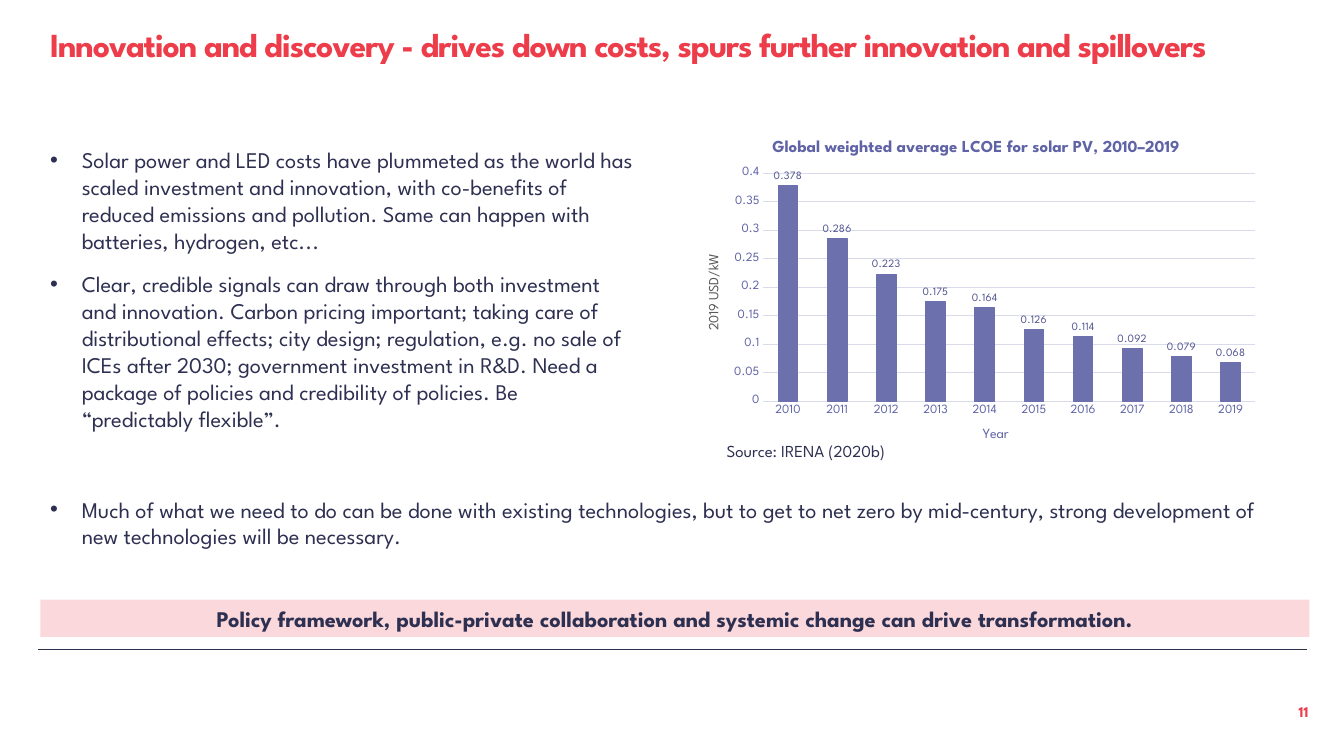
from lxml import etree
from pptx import Presentation
from pptx.chart.data import CategoryChartData
from pptx.dml.color import RGBColor
from pptx.enum.chart import XL_CHART_TYPE as ChartType, XL_LABEL_POSITION as LabelPosition
from pptx.enum.chart import XL_TICK_MARK as TickMark
from pptx.enum.shapes import MSO_CONNECTOR as Connector, MSO_SHAPE as Shape
from pptx.enum.text import MSO_ANCHOR as Anchor, PP_ALIGN as Align
from pptx.oxml.ns import qn
from pptx.util import Pt

FONT = "League Spartan"
COLORS = {
    "navy": "2E3052", "red": "ED3D4A", "pink": "FBD8DB", "bar": "6C70AD",
    "axis": "6064A6", "label": "50548F", "grid": "DADBEA", "gray": "595959",
}
LEFT = 28.8
LCOE = {
    "2010": 0.378, "2011": 0.286, "2012": 0.223, "2013": 0.175, "2014": 0.164,
    "2015": 0.126, "2016": 0.114, "2017": 0.092, "2018": 0.079, "2019": 0.068,
}
COST_POINTS = [
    "Solar power and LED costs have plummeted as the world has scaled investment and "
    "innovation, with co-benefits of reduced emissions and pollution. Same can happen with "
    "batteries, hydrogen, etc...",
    "Clear, credible signals can draw through both investment and innovation. Carbon pricing "
    "important; taking care of distributional effects; city design; regulation, e.g. no sale of "
    "ICEs after 2030; government investment in R&D. Need a package of policies and credibility "
    "of policies. Be “predictably flexible”.",
]
TECHNOLOGY_POINTS = [
    "Much of what we need to do can be done with existing technologies, but to get to net zero "
    "by mid-century, strong development of new technologies will be necessary.",
]


def color(name):
    return RGBColor.from_string(COLORS[name])


def style(font, size, name, bold=False):
    font.name = FONT
    font.size = Pt(size)
    font.bold = bold
    font.color.rgb = color(name)


def add_text(page, box, text, size, name, bold=False):
    frame = page.shapes.add_textbox(*map(Pt, box)).text_frame
    frame.word_wrap = True
    frame.text = text
    style(frame.paragraphs[0].runs[0].font, size, name, bold)
    return frame


def add_title(page, box, text):
    frame = add_text(page, box, text, 24, "red", True)
    frame.paragraphs[0].runs[0].font._element.set("spc", "-80")


def add_bullets(page, box, points):
    frame = page.shapes.add_textbox(*map(Pt, box)).text_frame
    frame.word_wrap = True
    frame.text = "\n".join(points)
    for para in frame.paragraphs:
        para.space_after = Pt(12)
        properties = para._p.get_or_add_pPr()
        properties.set("marL", str(Pt(22.5)))
        properties.set("indent", str(Pt(-22.5)))
        etree.SubElement(properties, qn("a:buFont")).set("typeface", "Arial")
        etree.SubElement(properties, qn("a:buChar")).set("char", "•")
        style(para.runs[0].font, 16, "navy")


def set_layout(parent, index, **places):
    for old in parent.findall(qn("c:layout")):
        parent.remove(old)
    layout = etree.Element(qn("c:layout"))
    manual = etree.SubElement(layout, qn("c:manualLayout"))
    if "w" in places:
        etree.SubElement(manual, qn("c:layoutTarget")).set("val", "inner")
    for mode in ("xMode", "yMode"):
        etree.SubElement(manual, qn(f"c:{mode}")).set("val", "edge")
    for key, value in places.items():
        etree.SubElement(manual, qn(f"c:{key}")).set("val", str(value))
    parent.insert(index, layout)


def set_heading(heading, text, size, name, x, y, bold=False):
    heading.text_frame.text = text
    style(heading.text_frame.paragraphs[0].runs[0].font, size, name, bold)
    set_layout(heading._element, 1, x=x, y=y)


def add_cost_chart(page, box):
    left, top, width, height = box
    data = CategoryChartData()
    data.categories = list(LCOE)
    data.add_series("Series 1", list(LCOE.values()))
    chart = page.shapes.add_chart(ChartType.COLUMN_CLUSTERED, *map(Pt, box), data).chart
    style(chart.font, 10, "navy")
    chart.has_legend = False
    chart.has_title = True
    set_heading(chart.chart_title, "Global weighted average LCOE for solar PV, 2010–2019",
                12, "axis", 0.15, 0.04, True)
    years, costs = chart.category_axis, chart.value_axis
    for axis in (years, costs):
        axis.has_title = True
        axis.major_tick_mark = axis.minor_tick_mark = TickMark.NONE
        style(axis.tick_labels.font, 9, "axis")
    set_heading(years.axis_title, "Year", 10, "axis", 0.51, 0.89)
    set_heading(costs.axis_title, "2019 USD/kW", 10, "gray", 0.04, 0.38)
    costs.minimum_scale, costs.maximum_scale, costs.major_unit = 0, 0.4, 0.05
    costs.format.line.fill.background()
    for line in (years.format.line, costs.major_gridlines.format.line):
        line.color.rgb = color("grid")
        line.width = Pt(0.75)

    plot = chart.plots[0]
    plot.gap_width = 150
    plot.vary_by_categories = False
    plot.has_data_labels = True
    labels = plot.data_labels
    labels.show_value = True
    labels.position = LabelPosition.OUTSIDE_END
    style(labels.font, 8, "label")
    bars = plot.series[0].format
    bars.fill.solid()
    bars.fill.fore_color.rgb = color("bar")
    bars.line.color.rgb = color("bar")
    bars.line.width = Pt(0.75)
    set_layout(chart._chartSpace.chart.plotArea, 0, x=0.14, y=0.15, w=0.84, h=0.67)
    add_text(page, (left + 25.2, top + height - 19.4, 151.2, 21.6),
             "Source: IRENA (2020b)", 12, "navy")


def add_banner(page, box, text):
    banner = page.shapes.add_shape(Shape.RECTANGLE, *map(Pt, box))
    banner.shadow.inherit = False
    banner.fill.solid()
    banner.fill.fore_color.rgb = color("pink")
    banner.line.fill.background()
    banner.text_frame.text = text
    para = banner.text_frame.paragraphs[0]
    para.alignment = Align.CENTER
    style(para.runs[0].font, 16, "navy", True)


def add_footer(page, box, number):
    left, top, width, height = box
    rule = page.shapes.add_connector(
        Connector.STRAIGHT, Pt(left), Pt(top), Pt(left + width), Pt(top))
    rule.line.color.rgb = color("navy")
    rule.line.width = Pt(0.5)
    etree.SubElement(rule._element.spPr, qn("a:effectLst"))
    frame = add_text(page, (left + width - 61.2, top + height - 20.2, 61.9, 20.2),
                     number, 10.7, "red", True)
    frame.margin_left = frame.margin_right = frame.margin_top = frame.margin_bottom = 0
    frame.vertical_anchor = Anchor.BOTTOM
    frame.paragraphs[0].alignment = Align.RIGHT


def main():
    deck = Presentation()
    deck.slide_width, deck.slide_height = Pt(960), Pt(540)
    page = deck.slides.add_slide(deck.slide_layouts[6])
    add_footer(page, (27.4, 463.7, 906.5, 51.1), "11")
    add_bullets(page, (LEFT, 100.8, 431.3, 232.6), COST_POINTS)
    add_cost_chart(page, (486.7, 87.1, 418.3, 243.4))
    add_title(page, (LEFT, 13.7, 915.8, 54),
              "Innovation and discovery - drives down costs, spurs further innovation and spillovers")
    add_banner(page, (LEFT, 428.4, 906.5, 26.6),
               "Policy framework, public-private collaboration and systemic change can drive "
               "transformation.")
    add_bullets(page, (LEFT, 350.6, 899.3, 46.1), TECHNOLOGY_POINTS)
    deck.save("out.pptx")


if __name__ == "__main__":
    main()
